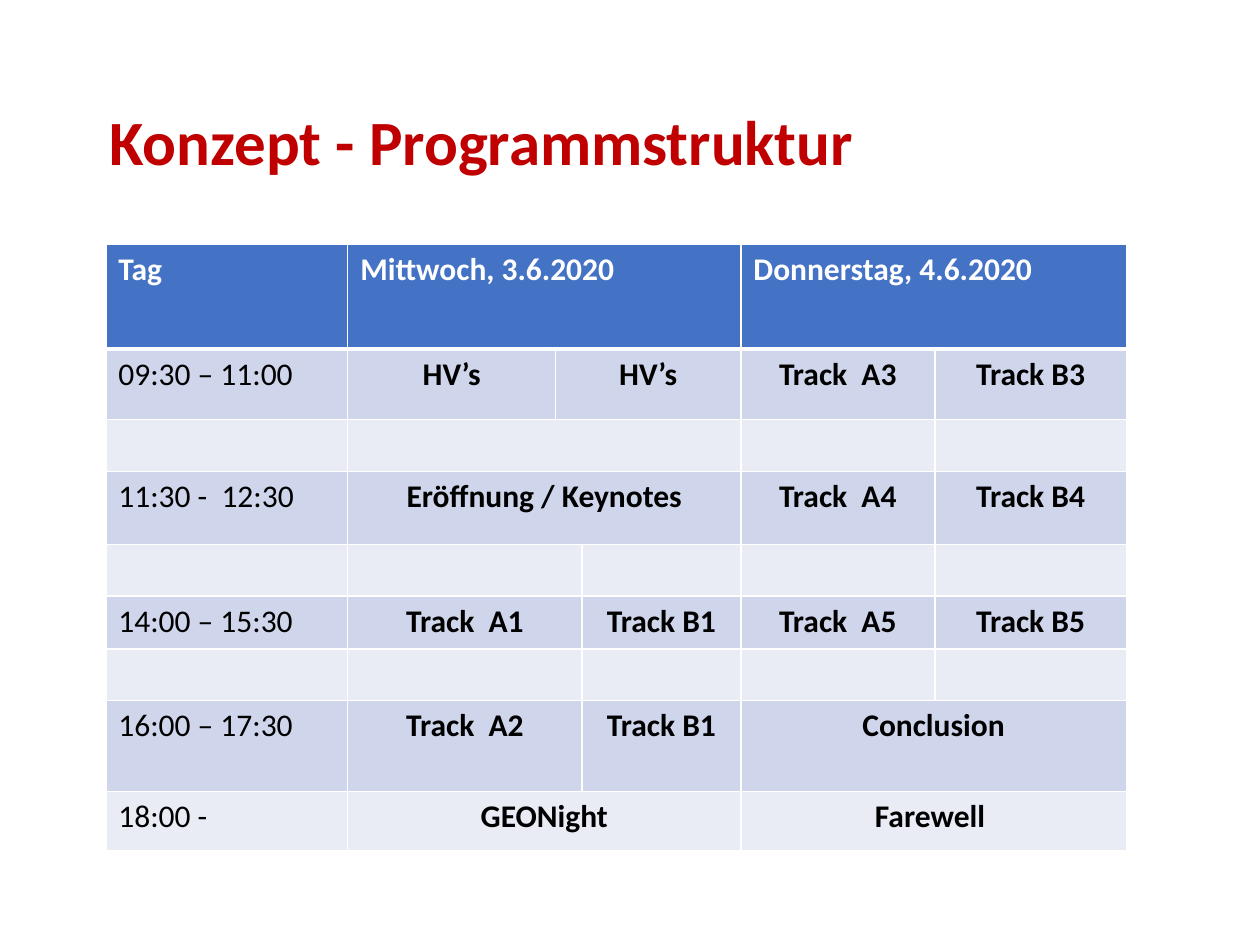
from dataclasses import dataclass

from lxml import etree
from pptx import Presentation
from pptx.dml.color import RGBColor
from pptx.enum.text import MSO_ANCHOR, PP_ALIGN
from pptx.oxml.ns import qn
from pptx.util import Inches, Pt

LEFT, CENTER = PP_ALIGN.LEFT, PP_ALIGN.CENTER
MIDDLE = MSO_ANCHOR.MIDDLE
SLIDE_W, SLIDE_H = Inches(10), Inches(7.5)


@dataclass(frozen=True)
class Theme:
    font: str = "Calibri"
    title_size: int = 36
    cell_size: int = 18
    title: str = "C00000"
    text: str = "000000"
    header: str = "4472C4"
    header_text: str = "FFFFFF"
    bands: tuple = ("CFD5EA", "E9EBF5")
    border: str = "FFFFFF"
    rule: int = 1
    header_rule: int = 3


THEME = Theme()

COLS = [19.2, 16.5, 2.1, 12.6, 15.4, 15.2]
ROWS = [11.07, 7.47, 5.47, 7.73, 5.47, 5.6, 5.47, 9.6, 6.27]

PROGRAMME = [
    [("Tag", 1), ("Mittwoch, 3.6.2020", 3), ("Donnerstag, 4.6.2020", 2)],
    [("09:30 – 11:00", 1), ("HV’s", 1), ("HV’s", 2), ("Track  A3", 1), ("Track B3", 1)],
    [("", 1), ("", 3), ("", 1), ("", 1)],
    [("11:30 -  12:30", 1), ("Eröffnung / Keynotes", 3), ("Track  A4", 1), ("Track B4", 1)],
    [("", 1), ("", 2), ("", 1), ("", 1), ("", 1)],
    [("14:00 – 15:30", 1), ("Track  A1", 2), ("Track B1", 1), ("Track  A5", 1), ("Track B5", 1)],
    [("", 1), ("", 2), ("", 1), ("", 1), ("", 1)],
    [("16:00 – 17:30", 1), ("Track  A2", 2), ("Track B1", 1), ("Conclusion", 2)],
    [("18:00 -", 1), ("GEONight", 3), ("Farewell ", 2)],
]


def across(percent):
    return round(SLIDE_W * percent / 100)


def down(percent):
    return round(SLIDE_H * percent / 100)


def write(tf, text, size, color, bold=True, align=LEFT, spacing=None):
    p = tf.paragraphs[0]
    p.alignment = align
    if spacing:
        p.line_spacing = spacing
    r = p.add_run()
    r.text = text
    r.font.name = THEME.font
    r.font.size = Pt(size)
    r.font.bold = bold
    r.font.color.rgb = RGBColor.from_string(color)


def add_title(s, text):
    box = s.shapes.add_textbox(across(7.7), down(5.73), across(86.2), down(19.33))
    tf = box.text_frame
    tf.word_wrap = True
    tf.vertical_anchor = MIDDLE
    write(tf, text, THEME.title_size, THEME.title, spacing=0.9)


def set_borders(cell, top, bottom):
    tc_pr = cell._tc.get_or_add_tcPr()
    widths = {"a:lnL": THEME.rule, "a:lnR": THEME.rule, "a:lnT": top, "a:lnB": bottom}
    for i, (tag, width) in enumerate(widths.items()):
        ln = etree.Element(qn(tag), w=str(Pt(width)))
        fill = etree.SubElement(ln, qn("a:solidFill"))
        etree.SubElement(fill, qn("a:srgbClr"), val=THEME.border)
        tc_pr.insert(i, ln)


def style_cell(cell, row):
    color = THEME.bands[(row - 1) % 2] if row else THEME.header
    cell.fill.solid()
    cell.fill.fore_color.rgb = RGBColor.from_string(color)
    top = THEME.header_rule if row == 1 else THEME.rule
    bottom = THEME.header_rule if row == 0 else THEME.rule
    set_borders(cell, top, bottom)


def fill_row(table, row, entries):
    for cell in table.rows[row].cells:
        style_cell(cell, row)
    col = 0
    for text, span in entries:
        cell = table.cell(row, col)
        if span > 1:
            cell.merge(table.cell(row, col + span - 1))
        if text:
            write(cell.text_frame, text, THEME.cell_size,
                  THEME.text if row else THEME.header_text,
                  bold=row == 0 or col > 0,
                  align=CENTER if row and col else LEFT)
        col += span


def add_programme(s):
    frame = s.shapes.add_table(len(ROWS), len(COLS), across(8.4), down(25.87),
                               across(sum(COLS)), down(sum(ROWS)))
    table = frame.table
    for column, width in zip(table.columns, COLS):
        column.width = across(width)
    for row, height in zip(table.rows, ROWS):
        row.height = down(height)
    for i, entries in enumerate(PROGRAMME):
        fill_row(table, i, entries)


def main():
    prs = Presentation()
    prs.slide_width, prs.slide_height = SLIDE_W, SLIDE_H
    s = prs.slides.add_slide(prs.slide_layouts[6])
    add_title(s, "Konzept - Programmstruktur")
    add_programme(s)
    prs.save("out.pptx")


if __name__ == "__main__":
    main()
